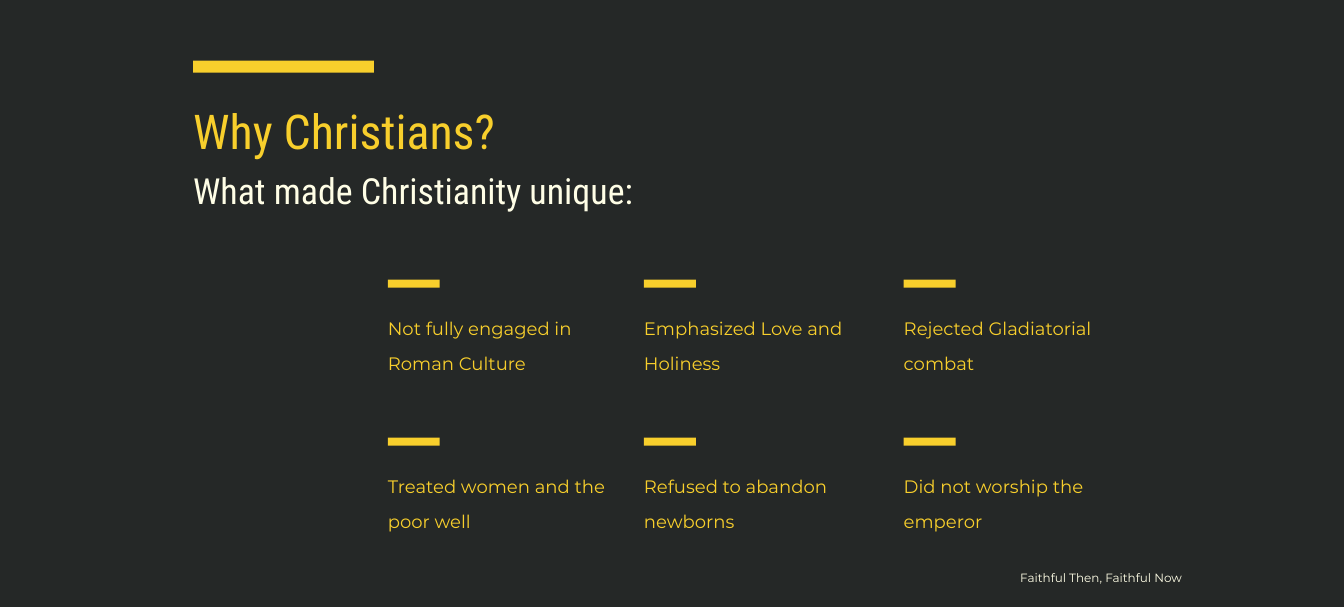
from dataclasses import dataclass

from pptx import Presentation
from pptx.dml.color import RGBColor
from pptx.enum.shapes import MSO_SHAPE
from pptx.enum.text import MSO_ANCHOR, MSO_AUTO_SIZE, PP_ALIGN
from pptx.util import Cm, Pt


@dataclass(frozen=True)
class Theme:
    back: RGBColor = RGBColor(0x25, 0x28, 0x27)
    gold: RGBColor = RGBColor(0xF8, 0xCF, 0x2C)
    cream: RGBColor = RGBColor(0xFF, 0xFE, 0xE6)
    head: str = "Roboto Condensed"
    body: str = "Montserrat"
    title: float = 51.4
    lead: float = 38.5
    item: float = 19.3
    foot: float = 12.8


THEME = Theme()

POINTS = [
    ["Not fully engaged in Roman Culture",
     "Emphasized Love and Holiness",
     "Rejected Gladiatorial combat"],
    ["Treated women and the poor well",
     "Refused to abandon newborns",
     "Did not worship the emperor"],
]


def add_bar(slide, left, top, width, height):
    bar = slide.shapes.add_shape(
        MSO_SHAPE.RECTANGLE, Cm(left), Cm(top), Cm(width), Cm(height))
    bar.shadow.inherit = False
    bar.fill.solid()
    bar.fill.fore_color.rgb = THEME.gold
    bar.line.fill.background()


def set_text(shape, text, font, size, color, space, align=PP_ALIGN.LEFT):
    frame = shape.text_frame
    frame.word_wrap = True
    frame.auto_size = MSO_AUTO_SIZE.NONE
    frame.vertical_anchor = MSO_ANCHOR.TOP
    frame.margin_left = frame.margin_right = 0
    frame.margin_top = frame.margin_bottom = 0
    para = frame.paragraphs[0]
    para.alignment = align
    para.line_spacing = space
    run = para.add_run()
    run.text = text
    run.font.name = font
    run.font.size = Pt(size)
    run.font.color.rgb = color


def add_box(slide, left, top, width, height):
    return slide.shapes.add_textbox(Cm(left), Cm(top), Cm(width), Cm(height))


def add_header(slide, left, top, width):
    add_bar(slide, left, top, 6.83, 0.46)
    title = slide.shapes.title
    title.left, title.top = Cm(left), Cm(top + 1.32)
    title.width, title.height = Cm(width), Cm(2.41)
    set_text(title, "Why Christians?", THEME.head, THEME.title,
             THEME.gold, 1.1)
    lead = add_box(slide, left, top + 3.76, width, 1.98)
    set_text(lead, "What made Christianity unique:", THEME.head, THEME.lead,
             THEME.cream, 1.2)


def add_point(slide, left, top, width, text):
    add_bar(slide, left, top, 1.96, 0.3)
    box = add_box(slide, left, top + 0.94, width, 2.64)
    set_text(box, text, THEME.body, THEME.item, THEME.gold, 1.6)


def add_grid(slide, left, top):
    steps = (0, 9.68, 19.5)
    for row, texts in enumerate(POINTS):
        for step, text in zip(steps, texts):
            add_point(slide, left + step, top + row * 5.97, 8.94, text)


def add_footer(slide, left, top, width):
    box = add_box(slide, left, top, width, 0.76)
    set_text(box, "Faithful Then, Faithful Now", THEME.body, THEME.foot,
             THEME.cream, 1.4, PP_ALIGN.RIGHT)


def main():
    deck = Presentation()
    deck.slide_width, deck.slide_height = Cm(50.8), Cm(22.94)
    slide = deck.slides.add_slide(deck.slide_layouts.get_by_name("Title Only"))
    slide.background.fill.solid()
    slide.background.fill.fore_color.rgb = THEME.back
    add_header(slide, 7.3, 2.29, 21.2)
    add_grid(slide, 14.66, 10.57)
    add_footer(slide, 25.4, 21.36, 19.28)
    deck.save("out.pptx")


if __name__ == "__main__":
    main()
